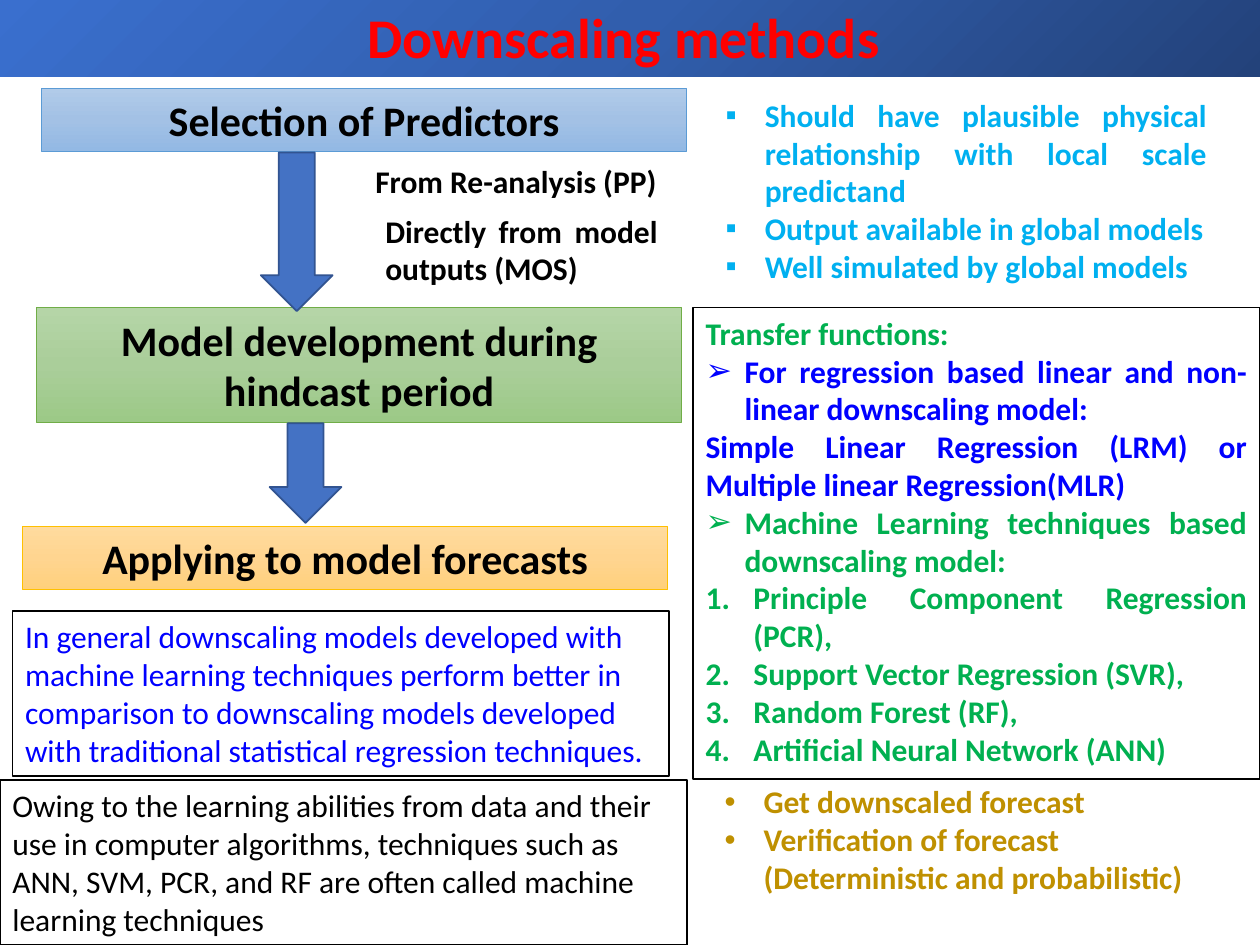
from dataclasses import dataclass

import pptx
import pptx.dml.color
import pptx.enum.shapes
import pptx.enum.text
import pptx.oxml
import pptx.oxml.ns
import pptx.util

Inches = pptx.util.Inches
Pt = pptx.util.Pt
SHAPE = pptx.enum.shapes.MSO_SHAPE
ALIGN = pptx.enum.text.PP_ALIGN
ANCHOR = pptx.enum.text.MSO_ANCHOR
AUTOSIZE = pptx.enum.text.MSO_AUTO_SIZE
NUMBERED = "1."

LEFT = ALIGN.LEFT
CENTER = ALIGN.CENTER
JUSTIFY = ALIGN.JUSTIFY
BLACK, WHITE, BLUE, GREEN = "000000", "FFFFFF", "0000FF", "00B050"
SKY, GOLD, RED = "00B0F0", "BF9000", "FF0000"


@dataclass
class Para:
    text: str
    color: str = BLACK
    bullet: str = ""
    indent: float = 0


@dataclass
class Box:
    at: tuple[float, float, float, float]
    paras: list[Para]
    size: int = 18
    bold: bool = True
    align: ALIGN = LEFT
    fill: str = ""
    stops: tuple[str, ...] = ()
    radial: bool = False
    line: str = ""
    weight: float = 1
    anchor: ANCHOR = ANCHOR.TOP


def rgb(value: str) -> pptx.dml.color.RGBColor:
    return pptx.dml.color.RGBColor.from_string(value)


def set_all(target: object, values: dict[str, object]) -> None:
    for name, value in values.items():
        setattr(target, name, value)


def place(sp, at: tuple[float, float, float, float]) -> None:
    names = ("left", "top", "width", "height")
    set_all(sp, dict(zip(names, map(Inches, at))))


def set_gradient(sp, stops: tuple[str, ...], radial: bool) -> None:
    sp.fill.gradient()
    old = sp.element.spPr.find(pptx.oxml.ns.qn("a:gradFill"))
    step = 100000 // (len(stops) - 1)
    gs = "".join(
        f'<a:gs pos="{i * step}"><a:srgbClr val="{c}"/></a:gs>'
        for i, c in enumerate(stops)
    )
    shade = '<a:lin ang="5400000" scaled="0"/>'
    if radial:
        shade = '<a:path path="circle"><a:fillToRect l="100000" t="100000"/></a:path>'
    ns = pptx.oxml.ns.nsdecls("a")
    new = f'<a:gradFill {ns} rotWithShape="1"><a:gsLst>{gs}</a:gsLst>{shade}</a:gradFill>'
    old.getparent().replace(old, pptx.oxml.parse_xml(new))


def set_bullet(p, para: Para) -> None:
    pPr = p._p.get_or_add_pPr()
    indent = Inches(para.indent)
    pPr.set("marL", str(indent))
    pPr.set("indent", str(-indent))
    ns = pptx.oxml.ns.nsdecls("a")
    if not para.bullet:
        tags = [f"<a:buNone {ns}/>"]
    elif para.bullet == NUMBERED:
        tags = [f'<a:buFont {ns} typeface="+mj-lt"/>', f'<a:buAutoNum {ns} type="arabicPeriod"/>']
    else:
        tags = [f'<a:buFont {ns} typeface="Arial"/>', f'<a:buChar {ns} char="{para.bullet}"/>']
    for tag in tags:
        pPr.append(pptx.oxml.parse_xml(tag))


def style(sp, box: Box) -> None:
    if box.stops:
        set_gradient(sp, box.stops, box.radial)
    elif box.fill:
        sp.fill.solid()
        sp.fill.fore_color.rgb = rgb(box.fill)
    else:
        sp.fill.background()
    if box.line:
        sp.line.color.rgb = rgb(box.line)
        sp.line.width = Pt(box.weight)
    else:
        sp.line.fill.background()


def write(sp, box: Box) -> None:
    tf = sp.text_frame
    set_all(tf, {"word_wrap": True, "auto_size": AUTOSIZE.NONE, "vertical_anchor": box.anchor})
    for i, para in enumerate(box.paras):
        p = tf.add_paragraph() if i else tf.paragraphs[0]
        set_all(p, {"alignment": box.align, "space_before": Pt(0), "line_spacing": 1.0})
        set_bullet(p, para)
        r = p.add_run()
        r.text = para.text
        set_all(r.font, {"name": "Calibri", "size": Pt(box.size), "bold": box.bold})
        r.font.color.rgb = rgb(para.color)


def draw_box(sp, box: Box) -> None:
    place(sp, box.at)
    style(sp, box)
    write(sp, box)


def add_shape(s, kind: SHAPE, at: tuple[float, float, float, float]):
    sp = s.shapes.add_shape(kind, *map(Inches, at))
    sp.shadow.inherit = False
    return sp


def step(at: tuple[float, float, float, float], text: str, stops: tuple[str, ...], line: str) -> Box:
    return Box(at, [Para(text)], 24, align=CENTER, stops=stops, line=line,
               weight=0.5, anchor=ANCHOR.MIDDLE)


def items(texts: list[str], color: str, bullet: str, indent: float = 0.31) -> list[Para]:
    return [Para(text, color, bullet, indent) for text in texts]


TITLE = Box((0, -0.03, 10, 0.64), [Para("Downscaling methods ", RED)], 32, align=CENTER,
            stops=("23427A", "315EAD", "3A6FCE"), radial=True, anchor=ANCHOR.MIDDLE)

LISTS = [
    Box((5.66, 0.71, 4.02, 1.62), items([
        "Should have plausible physical relationship with local scale predictand ",
        "Output available in global models",
        "Well simulated by global models",
    ], SKY, "▪"), align=JUSTIFY),
    Box((5.5, 2.44, 4.5, 3.74), [
        Para("Transfer functions: ", GREEN),
        *items(["For regression based linear and non-linear downscaling model:"], BLUE, "➢"),
        Para("Simple Linear Regression (LRM) or Multiple linear Regression(MLR)", BLUE),
        *items(["Machine Learning techniques based downscaling model: "], GREEN, "➢"),
        *items([
            "Principle Component Regression (PCR), ",
            "Support Vector Regression (SVR), ",
            "Random Forest (RF), ",
            "Artificial Neural Network (ANN)",
        ], GREEN, NUMBERED, 0.38),
    ], align=JUSTIFY, fill=WHITE, line=BLACK),
    Box((5.65, 6.16, 4.02, 1.01), items([
        "Get downscaled forecast",
        "Verification of forecast (Deterministic and probabilistic)",
    ], GOLD, "•")),
]

BOXES = [
    step((0.33, 0.7, 5.12, 0.5), "Selection of Predictors", ("B1CBE9", "A3C1E5", "93B9E4"), "5B9BD5"),
    step((0.29, 2.44, 5.12, 0.91), "Model development during hindcast period",
         ("B5D5A7", "AACE9A", "9CC987"), "70AD47"),
    step((0.18, 4.18, 5.12, 0.5), "Applying to model forecasts", ("FFDB9E", "FFD590", "FFD07C"), "FFC000"),
    Box((2.88, 1.24, 2.45, 0.4), [Para("From Re-analysis (PP)")]),
    Box((2.96, 1.63, 2.36, 0.71), [Para("Directly from model outputs (MOS)")], align=JUSTIFY),
    Box((0.1, 4.85, 5.21, 1.31), [
        Para("In general downscaling models developed with", BLUE),
        Para("machine learning techniques perform better in comparison to downscaling models "
             "developed with traditional statistical regression techniques.", BLUE),
    ], bold=False, fill=WHITE, line=BLACK),
    Box((0, 6.19, 5.45, 1.31), [
        Para("Owing to the learning abilities from data and their use in computer algorithms, "
             "techniques such as ANN, SVM, PCR, and RF are often called machine learning techniques"),
    ], bold=False, fill=WHITE, line=BLACK),
]

ARROWS = [
    Box((2.07, 1.21, 0.57, 1.26), [], fill="4472C4", line="325491"),
    Box((2.14, 3.36, 0.57, 0.79), [], fill="4472C4", line="325491"),
]


def main() -> None:
    prs = pptx.Presentation()
    set_all(prs, {"slide_width": Inches(10), "slide_height": Inches(7.5)})
    s = prs.slides.add_slide(prs.slide_layouts[4])
    title, *bodies, spare = s.placeholders
    spare.element.getparent().remove(spare.element)
    for sp, box in zip([title, *bodies], [TITLE, *LISTS]):
        draw_box(sp, box)
    for box in BOXES:
        if box.line:
            sp = add_shape(s, SHAPE.RECTANGLE, box.at)
        else:
            sp = s.shapes.add_textbox(*map(Inches, box.at))
        draw_box(sp, box)
    for box in ARROWS:
        style(add_shape(s, SHAPE.DOWN_ARROW, box.at), box)
    prs.save("out.pptx")


if __name__ == "__main__":
    main()
